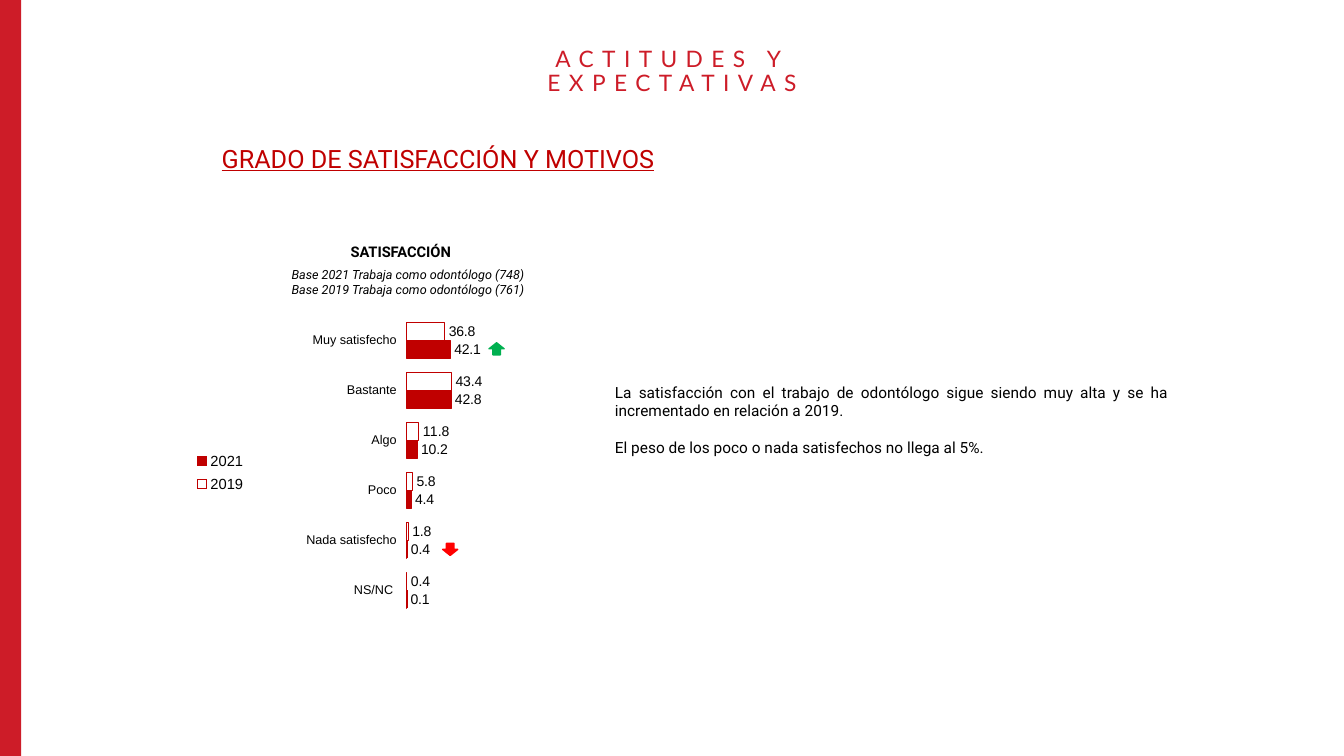
from lxml import etree
from pptx import Presentation
from pptx.chart import data
from pptx.dml.color import RGBColor
from pptx.enum import chart as ch, shapes, text
from pptx.oxml import ns
from pptx.util import Inches, Pt

BRAND_RED = RGBColor(0xCD, 0x1C, 0x28)
DARK_RED = RGBColor(0xC0, 0x00, 0x00)
BLACK = RGBColor(0x00, 0x00, 0x00)
RISE_GREEN = RGBColor(0x00, 0xB0, 0x50)
FALL_RED = RGBColor(0xFF, 0x00, 0x00)

LEVELS = ["Muy satisfecho", "Bastante", "Algo", "Poco", "Nada satisfecho", "NS/NC "]
WAVES = {
    "2019": [36.8, 43.4, 11.8, 5.8, 1.8, 0.4],
    "2021": [42.1, 42.8, 10.2, 4.4, 0.4, 0.1],
}


def set_font(font, size, color, name="Roboto"):
    """Apply size, colour and typeface to a font."""
    font.size = Pt(size)
    font.color.rgb = color
    font.name = name


def add_text(slide, box, lines, size, color=BLACK, align=text.PP_ALIGN.LEFT, gap=0):
    """Place a wrapped text box and return its paragraphs."""
    frame = slide.shapes.add_textbox(*map(Inches, box)).text_frame
    frame.word_wrap = True
    frame.auto_size = text.MSO_AUTO_SIZE.SHAPE_TO_FIT_TEXT
    frame.text = "\n".join(lines)
    for index, paragraph in enumerate(frame.paragraphs):
        paragraph.alignment = align
        set_font(paragraph.font, size, color)
        if index and gap:
            paragraph.space_before = Pt(gap)
    return frame.paragraphs


def add_solid(slide, kind, box, color):
    """Add a shadowless preset shape of one colour."""
    solid = slide.shapes.add_shape(kind, *map(Inches, box))
    solid.shadow.inherit = False
    solid.fill.solid()
    solid.fill.fore_color.rgb = color
    solid.line.color.rgb = color
    solid.line.width = Pt(1)
    return solid


def set_layout(parent, position, **settings):
    """Give a chart part a manual layout at the child position."""
    for old in parent.findall(ns.qn("c:layout")):
        parent.remove(old)
    layout = etree.Element(ns.qn("c:layout"))
    manual = etree.SubElement(layout, ns.qn("c:manualLayout"))
    for tag, value in settings.items():
        etree.SubElement(manual, ns.qn(f"c:{tag}")).set("val", str(value))
    parent.insert(position, layout)


def add_heading(slide, left, top):
    """Place the slide title and the underlined section heading."""
    title = slide.shapes.title
    title.left, title.top = Inches(left + 2.45), Inches(top)
    title.width, title.height = Inches(4.23), Inches(0.37)
    frame = title.text_frame
    frame.text = "ACTITUDES Y EXPECTATIVAS"
    frame.word_wrap = True
    frame.auto_size = text.MSO_AUTO_SIZE.NONE
    frame.vertical_anchor = text.MSO_ANCHOR.MIDDLE
    paragraph = frame.paragraphs[0]
    paragraph.alignment = text.PP_ALIGN.CENTER
    paragraph.line_spacing = 0.9
    set_font(paragraph.font, 16.2, BRAND_RED, "Lato")
    paragraph.runs[0].font._element.set("spc", "600")

    section = add_text(slide, (left, top + 0.84, 8.44, 0.4),
                       ["GRADO DE SATISFACCIÓN Y MOTIVOS"], 18, DARK_RED)
    section[0].font.underline = True


def style_series(series):
    """Outline one survey wave and label its bars."""
    series.invert_if_negative = False
    if series.name == "2021":
        series.format.fill.solid()
        series.format.fill.fore_color.rgb = DARK_RED
    else:
        series.format.fill.background()
    series.format.line.color.rgb = DARK_RED
    series.format.line.width = Pt(0.75)
    labels = series.data_labels
    labels.show_value = True
    labels.position = ch.XL_LABEL_POSITION.OUTSIDE_END
    labels.number_format = "#,##0.0"
    labels.number_format_is_linked = False
    set_font(labels.font, 10, BLACK, "Arial")


def add_chart(slide, box):
    """Draw the satisfaction bars for both waves in the box."""
    survey = data.CategoryChartData()
    survey.categories = LEVELS
    for wave, shares in WAVES.items():
        survey.add_series(wave, shares)
    chart = slide.shapes.add_chart(
        ch.XL_CHART_TYPE.BAR_CLUSTERED, *map(Inches, box), survey).chart
    chart.has_title = False
    set_font(chart.font, 10.5, BLACK, "Arial")

    levels = chart.category_axis
    levels.reverse_order = True
    levels.major_tick_mark = ch.XL_TICK_MARK.OUTSIDE
    levels.format.line.fill.background()
    set_font(levels.tick_labels.font, 9, BLACK, "Arial")
    shares_axis = chart.value_axis
    shares_axis.minimum_scale, shares_axis.maximum_scale = 0, 110
    shares_axis.major_unit = 10
    shares_axis.has_major_gridlines = False
    shares_axis.visible = False

    bars = chart.plots[0]
    bars.gap_width, bars.overlap = 80, 0
    bars.vary_by_categories = False
    for series in bars.series:
        style_series(series)

    chart.has_legend = True
    chart.legend.position = ch.XL_LEGEND_POSITION.RIGHT
    chart.legend.include_in_layout = False
    set_font(chart.legend.font, 10.5, BLACK, "Arial")
    set_layout(chart.legend._element, 1, xMode="edge", yMode="edge",
               x=0.1, y=0.44, w=0.16, h=0.16)
    set_layout(chart._chartSpace.chart.plotArea, 0, layoutTarget="inner",
               xMode="edge", yMode="edge", x=0.657, y=0.037, w=0.293, h=0.922)


def add_satisfaction(slide, left, top):
    """Place the captioned chart and its change arrows."""
    center = text.PP_ALIGN.CENTER
    caption = add_text(slide, (left + 1.45, top, 2.07, 0.28),
                       ["SATISFACCIÓN"], 10.5, align=center)
    caption[0].font.bold = True
    add_chart(slide, (left, top + 0.65, 3.87, 3.23))
    bases = add_text(slide, (left + 1.23, top + 0.24, 2.65, 0.4),
                     ["Base 2021 Trabaja como odontólogo (748)",
                      "Base 2019 Trabaja como odontólogo (761)"], 9, align=center)
    for base in bases:
        base.font.italic = True
    arrow = shapes.MSO_SHAPE.DOWN_ARROW
    rise = add_solid(slide, arrow, (left + 3.36, top + 1.04, 0.15, 0.12), RISE_GREEN)
    rise.rotation = 180
    add_solid(slide, arrow, (left + 2.9, top + 3.03, 0.15, 0.12), FALL_RED)


def add_findings(slide, box):
    """Write the justified findings in the box."""
    add_text(slide, box,
             ["La satisfacción con el trabajo de odontólogo sigue siendo muy alta "
              "y se ha incrementado en relación a 2019.",
              "El peso de los poco o nada satisfechos no llega al 5%."],
             11, align=text.PP_ALIGN.JUSTIFY, gap=13)


def main():
    """Build and save the slide."""
    deck = Presentation()
    deck.slide_width, deck.slide_height = Inches(13.33), Inches(7.5)
    slide = deck.slides.add_slide(deck.slide_layouts.get_by_name("Title Only"))
    band = add_solid(slide, shapes.MSO_SHAPE.RECTANGLE, (0, 0, 0.21, 7.5), BRAND_RED)
    band.line.fill.background()
    add_heading(slide, 2.1, 0.53)
    add_findings(slide, (6, 3.75, 5.69, 0.84))
    add_satisfaction(slide, 1.49, 2.36)
    deck.save("out.pptx")


if __name__ == "__main__":
    main()
